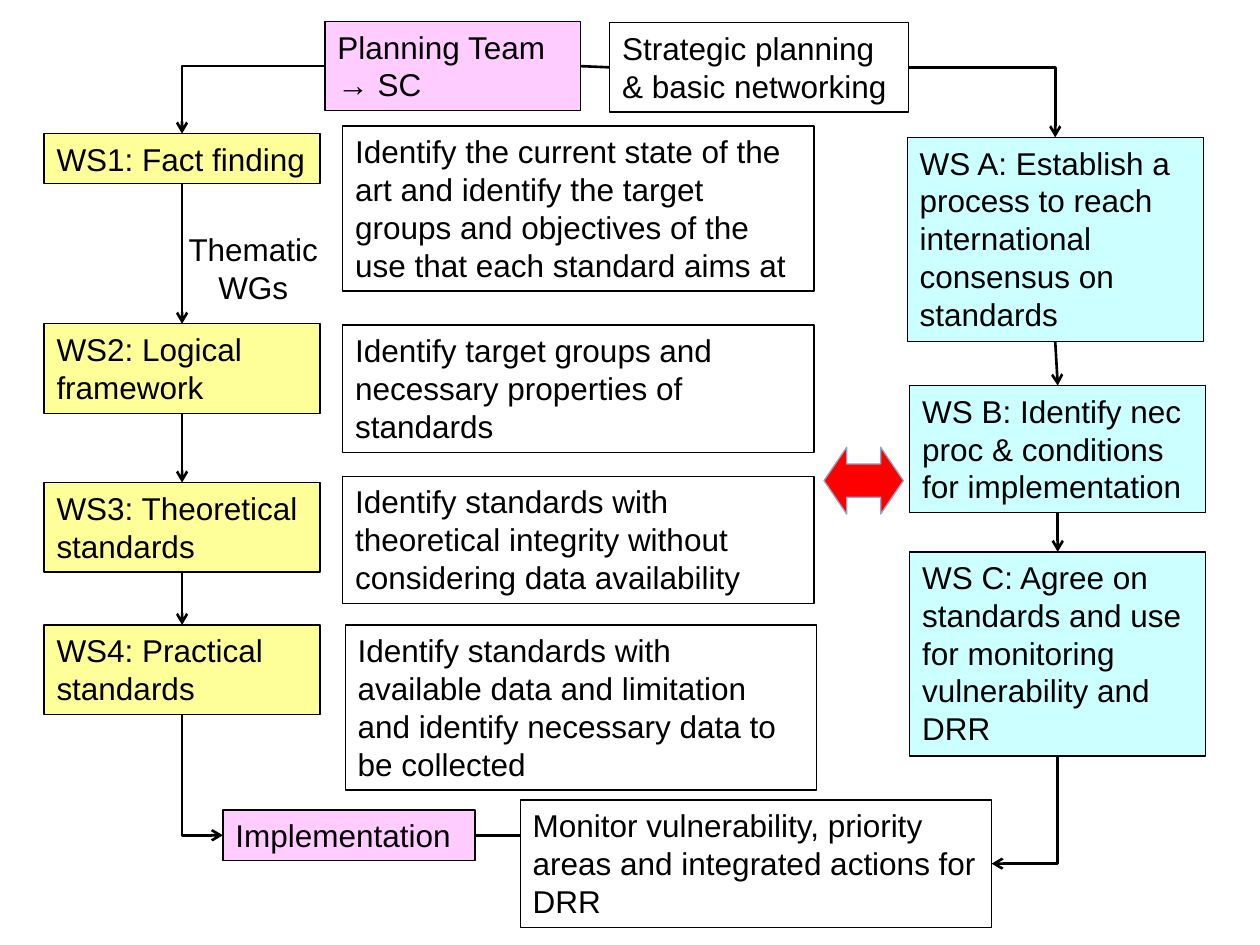
import pptx
import pptx.util
from pptx.dml.color import RGBColor
from pptx.enum.shapes import MSO_CONNECTOR, MSO_SHAPE
from pptx.enum.text import MSO_ANCHOR, MSO_AUTO_SIZE, PP_ALIGN
from lxml import etree
from pptx.oxml.ns import qn

Inches, Pt = pptx.util.Inches, pptx.util.Pt

THEME = {
    "font": "Arial", "size": 18, "ink": "000000", "border": 0.75, "link": 1.5,
    "team": "FFCCFF", "work": "FFFF99", "consensus": "CCFFFF", "note": None,
    "exchange": "FF0000", "exchange_edge": "8EA5CB",
}
TOP, LEFT, BOTTOM, RIGHT = range(4)

# Content: (key, text, top, height) for each column; left, width and colour are shared
COLUMNS = [
    ("work", 0.35, 2.19, [
        ("ws1", "WS1: Fact finding", 1.06, 0.4),
        ("ws2", "WS2: Logical framework", 2.57, 0.71),
        ("ws3", "WS3: Theoretical standards", 3.83, 0.71),
        ("ws4", "WS4: Practical standards", 4.96, 0.71)]),
    ("note", 2.72, 3.74, [
        ("note1", "Identify the current state of the art and identify the target groups "
                  "and objectives of the use that each standard aims at", 1, 1.31),
        ("note2", "Identify target groups and necessary properties of standards", 2.58, 1.01),
        ("note3", "Identify standards with theoretical integrity without considering "
                  "data availability", 3.78, 1.01)]),
    ("note", 2.74, 3.74, [
        ("note4", "Identify standards with available data and limitation and identify "
                  "necessary data to be collected", 4.96, 1.31)]),
    ("consensus", 7.2, 2.35, [
        ("wsA", "WS A: Establish a process to reach international consensus on standards",
         1.09, 1.62)]),
    ("consensus", 7.22, 2.35, [
        ("wsB", "WS B: Identify nec proc & conditions for implementation", 3.06, 1.01),
        ("wsC", "WS C: Agree on standards and use for monitoring vulnerability and DRR",
         4.38, 1.62)]),
    ("team", 2.58, 2.03, [("planning", "Planning Team → SC", 0.17, 0.71)]),
    ("note", 4.84, 2.37, [
        ("strategy", "Strategic planning & basic networking", 0.18, 0.71)]),
    ("team", 1.77, 2, [("implementation", "Implementation", 6.43, 0.4)]),
    ("note", 4.13, 3.74, [
        ("monitor", "Monitor vulnerability, priority areas and integrated actions for DRR",
         6.35, 1.01)]),
]
ONE_LINE = {"ws1", "implementation"}

DOWN_LINKS = [("ws1", "ws2"), ("ws2", "ws3"), ("ws3", "ws4"), ("wsA", "wsB"), ("wsB", "wsC")]
# Each elbow leaves its first box sideways; the arrowhead sits at the named end
ELBOWS = [
    ("planning", LEFT, "ws1", TOP, "tailEnd"),
    ("strategy", RIGHT, "wsA", TOP, "tailEnd"),
    ("implementation", LEFT, "ws4", BOTTOM, "headEnd"),
    ("monitor", RIGHT, "wsC", BOTTOM, "headEnd"),
]
PLAIN_LINKS = [("planning", "strategy")]


def rgb(name):
    return RGBColor.from_string(THEME[name])


def write(shape, text, align, wrap=True):
    frame = shape.text_frame
    frame.text = text
    frame.word_wrap = wrap
    frame.auto_size = MSO_AUTO_SIZE.SHAPE_TO_FIT_TEXT
    frame.vertical_anchor = MSO_ANCHOR.TOP
    paragraph = frame.paragraphs[0]
    paragraph.alignment = align
    font = paragraph.runs[0].font
    font.name, font.size = THEME["font"], Pt(THEME["size"])
    font.color.rgb = rgb("ink")


def add_box(slide, key, text, colour, *place):
    box = slide.shapes.add_shape(MSO_SHAPE.RECTANGLE, *map(Inches, place))
    box.shadow.inherit = False
    if THEME[colour]:
        box.fill.solid()
        box.fill.fore_color.rgb = rgb(colour)
    else:
        box.fill.background()
    box.line.color.rgb = rgb("ink")
    box.line.width = Pt(THEME["border"])
    write(box, text, PP_ALIGN.LEFT, key not in ONE_LINE)
    return box


def add_link(slide, start, start_side, finish, finish_side, arrow=None, elbow=False):
    kind = MSO_CONNECTOR.ELBOW if elbow else MSO_CONNECTOR.STRAIGHT
    link = slide.shapes.add_connector(kind, 0, 0, 0, 0)
    link.begin_connect(start, start_side)
    if finish is not None:
        link.end_connect(finish, finish_side)
    link.line.color.rgb = rgb("ink")
    link.line.width = Pt(THEME["link"])
    properties = link._element.spPr
    if elbow:  # a single corner
        properties.find(qn("a:prstGeom")).set("prst", "bentConnector2")
    if arrow:
        etree.SubElement(properties.find(qn("a:ln")), qn("a:" + arrow), type="arrow")
    etree.SubElement(properties, qn("a:effectLst"))
    return link


def main():
    deck = pptx.Presentation()
    deck.slide_width, deck.slide_height = Inches(10), Inches(7.5)
    slide = deck.slides.add_slide(deck.slide_layouts[6])

    # Boxes
    boxes = {}
    for colour, left, width, entries in COLUMNS:
        for key, text, top, height in entries:
            boxes[key] = add_box(slide, key, text, colour, left, top, width, height)

    # Links between boxes
    for upper, lower in DOWN_LINKS:
        add_link(slide, boxes[upper], BOTTOM, boxes[lower], TOP, "tailEnd")
    for start, start_side, finish, finish_side, arrow in ELBOWS:
        add_link(slide, boxes[start], start_side, boxes[finish], finish_side, arrow, True)
    for start, finish in PLAIN_LINKS:
        add_link(slide, boxes[start], RIGHT, boxes[finish], LEFT)
    # This one meets the monitoring box above the middle of its side
    outcome = add_link(slide, boxes["implementation"], RIGHT, None, None)
    outcome.end_x, outcome.end_y = boxes["monitor"].left, outcome.begin_y

    # Exchange between the two streams
    exchange = slide.shapes.add_shape(
        MSO_SHAPE.LEFT_RIGHT_ARROW, *map(Inches, (6.54, 3.55, 0.63, 0.53)))
    exchange.shadow.inherit = False
    exchange.adjustments[0], exchange.adjustments[1] = 0.5, 0.34
    exchange.fill.solid()
    exchange.fill.fore_color.rgb = rgb("exchange")
    exchange.line.color.rgb = rgb("exchange_edge")
    exchange.line.width = 0

    # Working group label
    groups = slide.shapes.add_textbox(*map(Inches, (1.3, 1.78, 1.42, 0.71)))
    write(groups, "Thematic WGs", PP_ALIGN.CENTER)

    deck.save("out.pptx")


if __name__ == "__main__":
    main()
